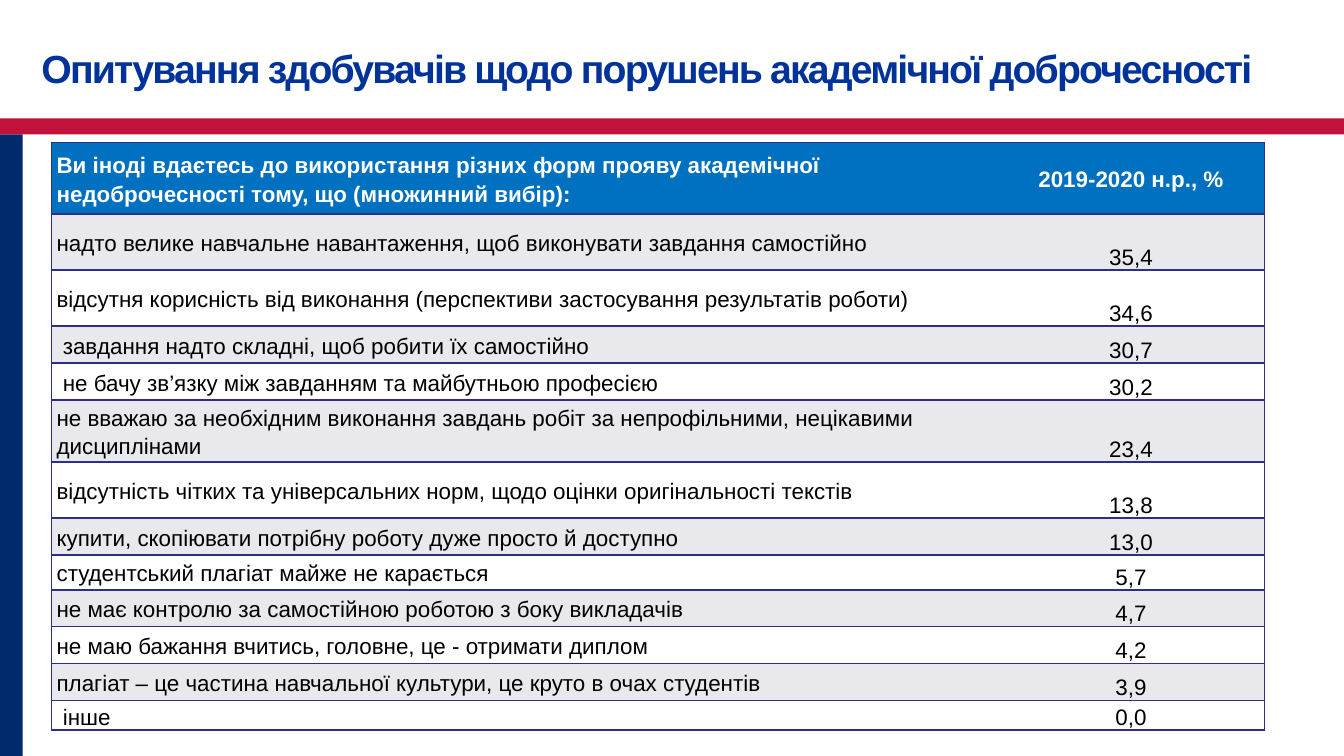
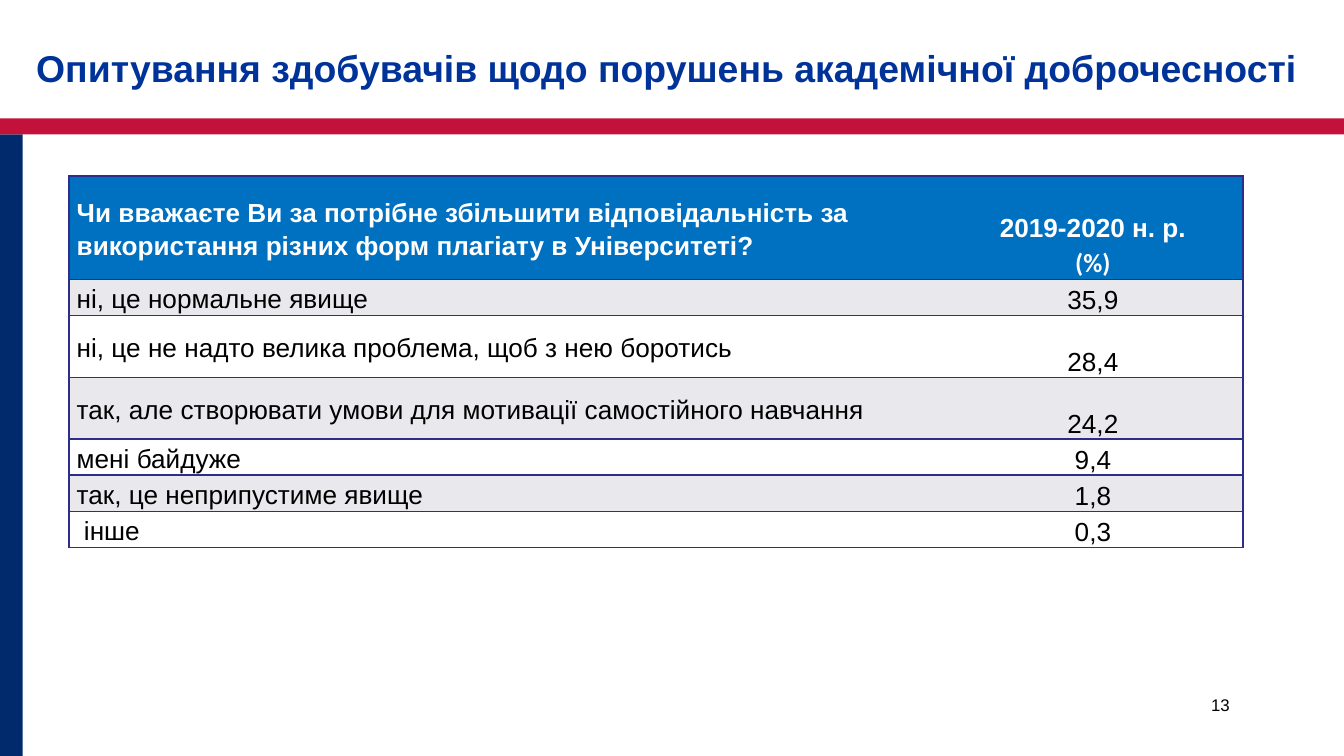
from dataclasses import dataclass
from typing import NamedTuple

from lxml.etree import SubElement
from pptx import Presentation
from pptx.dml.color import RGBColor as RGB
from pptx.enum.shapes import MSO_SHAPE as Shp
from pptx.enum.text import MSO_ANCHOR as Anchor, MSO_AUTO_SIZE as AutoSize, PP_ALIGN as Align
from pptx.oxml.ns import qn
from pptx.util import Cm, Pt


@dataclass(frozen=True)
class Theme:
    font: str = "Arial"
    unit_font: str = "Calibri"
    navy: str = "002A6C"
    red: str = "C2113A"
    title: str = "003399"
    header: str = "0070C0"
    stripe: str = "E8E8ED"
    white: str = "FFFFFF"
    black: str = "000000"
    grid: str = "2D2D8A"
    grid_pt: float = 1
    number_pt: float = 9
    leading: float = 1.15


class Box(NamedTuple):
    x: float
    y: float
    w: float
    h: float


class Band(NamedTuple):
    box: Box
    color: str


class Answer(NamedTuple):
    text: str
    share: str
    height: float


@dataclass(frozen=True)
class Survey:
    title_box: Box
    title_pt: float
    question: str
    period: list[tuple[str, str]]
    period_anchor: Anchor
    header_height: float
    answers: list[Answer]
    table_at: tuple[float, float]
    cols: tuple[float, float]
    text_pt: float
    inset: float
    title_spacing: float = 0
    number: str = ""


T = Theme()
TITLE = "Опитування здобувачів щодо порушень академічної доброчесності"
BANDS = [
    Band(Box(0, 2.54, 0.43, 11.75), T.navy),
    Band(Box(0, 2.24, 25.4, 0.3), T.red),
]
NUMBER_BOX = Box(18.21, 13, 5.28, 0.97)
SURVEYS = [
    Survey(
        title_box=Box(0.53, 0.64, 23.85, 1.27),
        title_pt=21,
        title_spacing=-1,
        question="Ви іноді вдаєтесь до використання різних форм прояву академічної "
                 "недоброчесності тому, що (множинний вибір):",
        period=[("2019-2020 н.р., %", T.font)],
        period_anchor=Anchor.MIDDLE,
        header_height=1.35,
        answers=[
            Answer("надто велике навчальне навантаження, щоб виконувати завдання самостійно", "35,4", 1.06),
            Answer("відсутня корисність від виконання (перспективи застосування результатів роботи)", "34,6", 1.06),
            Answer(" завдання надто складні, щоб робити їх самостійно", "30,7", 0.7),
            Answer(" не бачу зв’язку між завданням та майбутньою професією", "30,2", 0.7),
            Answer("не вважаю за необхідним виконання завдань робіт за непрофільними, "
                   "нецікавими дисциплінами", "23,4", 1.17),
            Answer("відсутність чітких та універсальних норм, щодо оцінки оригінальності текстів", "13,8", 1.06),
            Answer("купити, скопіювати потрібну роботу дуже просто й доступно", "13,0", 0.7),
            Answer("студентський плагіат майже не карається", "5,7", 0.66),
            Answer("не має контролю за самостійною роботою з боку викладачів", "4,7", 0.7),
            Answer("не маю бажання вчитись, головне, це - отримати диплом", "4,2", 0.7),
            Answer("плагіат – це частина навчальної культури, це круто в очах студентів", "3,9", 0.7),
            Answer(" інше", "0,0", 0.56),
        ],
        table_at=(0.97, 2.69),
        cols=(17.88, 5.05),
        text_pt=12,
        inset=0.1,
    ),
    Survey(
        title_box=Box(0.43, 0.64, 24.46, 1.27),
        title_pt=20,
        question="Чи вважаєте Ви за потрібне збільшити відповідальність за "
                 "використання різних форм плагіату в Університеті?",
        period=[("2019-2020 н. р.", T.font), ("(%)", T.unit_font)],
        period_anchor=Anchor.BOTTOM,
        header_height=1.95,
        answers=[
            Answer("ні, це нормальне явище", "35,9", 0.59),
            Answer("ні, це не надто велика проблема, щоб з нею боротись", "28,4", 1.17),
            Answer("так, але створювати умови для мотивації самостійного навчання", "24,2", 1.17),
            Answer("мені байдуже", "9,4", 0.59),
            Answer("так, це неприпустиме явище", "1,8", 0.59),
            Answer(" інше", "0,3", 0.59),
        ],
        table_at=(1.3, 3.33),
        cols=(16.52, 5.67),
        text_pt=14,
        inset=0.15,
        number="13",
    ),
]


def cms(values) -> list:
    return [Cm(v) for v in values]


def add_run(p, text: str, size: float, color: str, bold: bool = False, font: str = T.font):
    r = p.add_run()
    r.text = text
    r.font.name = font
    r.font.size = Pt(size)
    r.font.bold = bold
    r.font.color.rgb = RGB.from_string(color)
    return r


def add_bands(s, layout) -> None:
    for i, band in enumerate(BANDS):
        sp = s.shapes.add_shape(Shp.RECTANGLE, *cms(band.box))
        sp.shadow.inherit = False
        sp.fill.solid()
        sp.fill.fore_color.rgb = RGB.from_string(band.color)
        sp.line.fill.background()
        sp.element.nvSpPr.cNvPr.set("id", str(100 + i))
        layout.shapes.element.insert(2 + i, sp.element)


def add_title(s, survey: Survey) -> None:
    sp = s.shapes.title
    sp.left, sp.top, sp.width, sp.height = cms(survey.title_box)
    tf = sp.text_frame
    tf.auto_size = AutoSize.NONE
    tf.word_wrap = True
    tf.vertical_anchor = Anchor.MIDDLE
    p = tf.paragraphs[0]
    p.alignment = Align.LEFT
    r = add_run(p, TITLE, survey.title_pt, T.title, bold=True)
    if survey.title_spacing:
        r.font._element.set("spc", str(int(survey.title_spacing * 100)))


def add_number(s, number: str) -> None:
    tf = s.shapes.add_textbox(*cms(NUMBER_BOX)).text_frame
    tf.word_wrap = True
    p = tf.paragraphs[0]
    p.alignment = Align.RIGHT
    add_run(p, number, T.number_pt, T.black)


def set_borders(cell, open_side: str) -> None:
    tc_pr = cell._tc.get_or_add_tcPr()
    for i, side in enumerate(("lnL", "lnR", "lnT", "lnB")):
        ln = SubElement(tc_pr, qn(f"a:{side}"), w=str(Pt(T.grid_pt)))
        if side == open_side:
            SubElement(ln, qn("a:noFill"))
        else:
            fill = SubElement(ln, qn("a:solidFill"))
            SubElement(fill, qn("a:srgbClr"), val=T.grid)
        tc_pr.insert(i, ln)


def fill_cell(cell, lines: list[tuple[str, str]], survey: Survey, fill: str,
              anchor: Anchor, is_header: bool, is_share: bool) -> None:
    cell.fill.solid()
    cell.fill.fore_color.rgb = RGB.from_string(fill)
    cell.vertical_anchor = anchor
    cell.margin_left = cell.margin_right = Cm(survey.inset)
    cell.margin_top = cell.margin_bottom = 0
    tf = cell.text_frame
    for i, (text, font) in enumerate(lines):
        p = tf.add_paragraph() if i else tf.paragraphs[0]
        p.alignment = Align.CENTER if is_share else Align.LEFT
        p.line_spacing = T.leading
        add_run(p, text, survey.text_pt, T.white if is_header else T.black, is_header, font)
    set_borders(cell, "lnL" if is_share else "lnR")


def add_survey_table(s, survey: Survey) -> None:
    heights = [survey.header_height] + [a.height for a in survey.answers]
    box = Box(*survey.table_at, sum(survey.cols), sum(heights))
    table = s.shapes.add_table(len(heights), len(survey.cols), *cms(box)).table
    table.horz_banding = False
    for col, width in zip(table.columns, survey.cols):
        col.width = Cm(width)
    for row, height in zip(table.rows, heights):
        row.height = Cm(height)
    fill_cell(table.cell(0, 0), [(survey.question, T.font)], survey, T.header, Anchor.MIDDLE, True, False)
    fill_cell(table.cell(0, 1), survey.period, survey, T.header, survey.period_anchor, True, True)
    for i, answer in enumerate(survey.answers, 1):
        fill = T.stripe if i % 2 else T.white
        fill_cell(table.cell(i, 0), [(answer.text, T.font)], survey, fill, Anchor.MIDDLE, False, False)
        fill_cell(table.cell(i, 1), [(answer.share, T.font)], survey, fill, Anchor.BOTTOM, False, True)


def main() -> None:
    prs = Presentation()
    prs.slide_width, prs.slide_height = Cm(25.4), Cm(14.29)
    layout = prs.slide_layouts.get_by_name("Title Only")
    for i, survey in enumerate(SURVEYS):
        s = prs.slides.add_slide(layout)
        if i == 0:
            add_bands(s, layout)
        add_title(s, survey)
        if survey.number:
            add_number(s, survey.number)
        add_survey_table(s, survey)
    prs.save("out.pptx")


if __name__ == "__main__":
    main()
